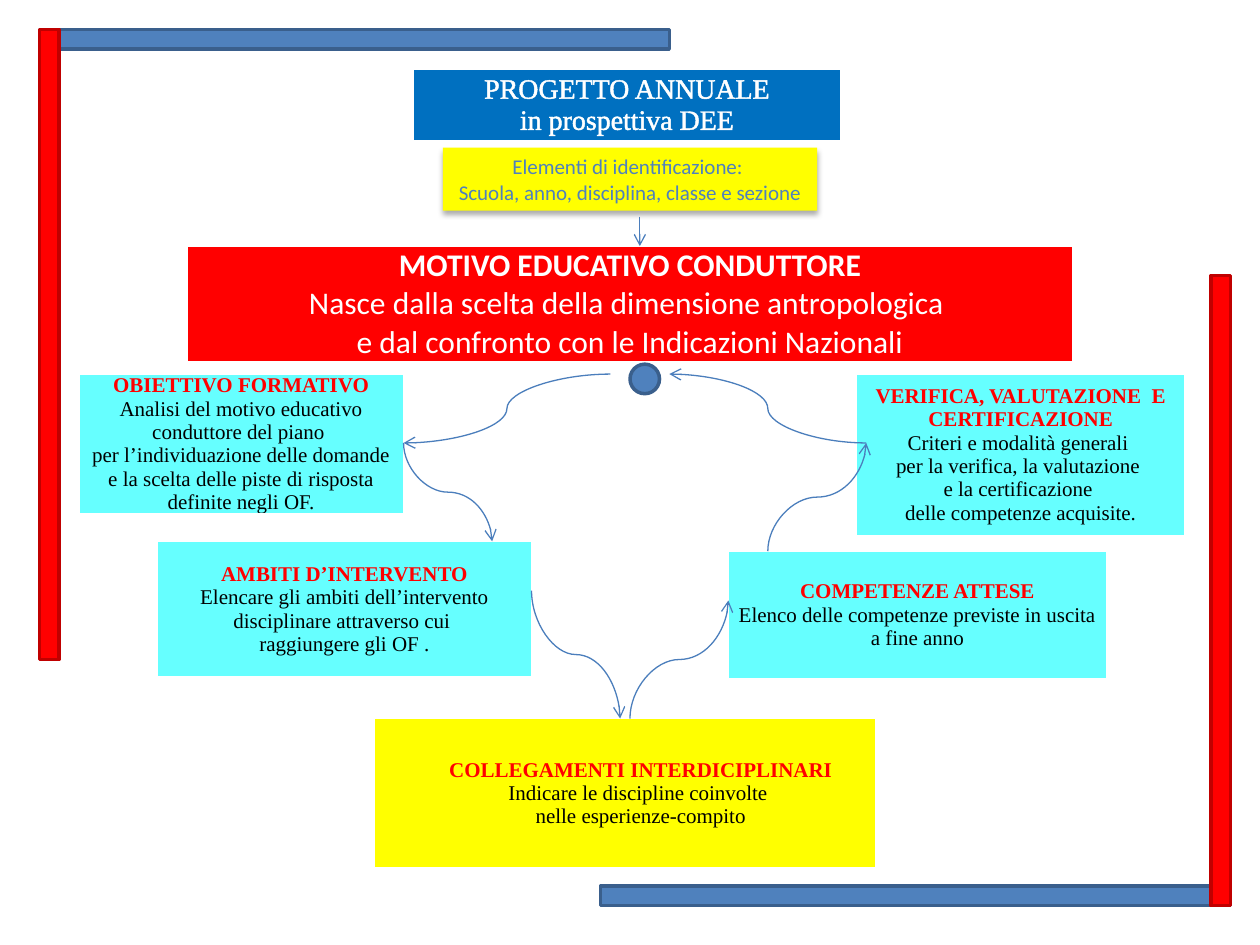
import copy

import lxml.etree
import pptx
import pptx.dml.color
import pptx.enum.shapes
import pptx.enum.text
import pptx.oxml
import pptx.oxml.ns
import pptx.util

SHAPE = pptx.enum.shapes.MSO_SHAPE
CONNECTOR = pptx.enum.shapes.MSO_CONNECTOR
COLORS = {"blue": "4F81BD", "blue_edge": "3A5F8C", "arrow": "4B7EBC",
          "red": "FF0000", "red_edge": "C00000", "title": "0070C0",
          "cyan": "66FFFF", "yellow": "FFFF00", "white": "FFFFFF",
          "black": "000000"}
SERIF, SANS = "Times New Roman", "Calibri"
HEADING = {"name": SERIF, "size": 12, "color": "red", "bold": True}
BODY = {"name": SERIF, "size": 12, "color": "black", "bold": False}
TITLE = {"name": SERIF, "size": 16, "color": "white", "bold": False}
THEME = {"name": SANS, "size": 18, "color": "white", "bold": True}
DETAIL = {**THEME, "bold": False}
LABEL = {"name": SANS, "size": 12, "color": "blue", "bold": False}

# The slide is a grid of 128 columns by 96 rows of square units.
UNIT = pptx.util.Inches(10) / 128


def grid(*values):
    return [round(v * UNIT) for v in values]


def rgb(name):
    return pptx.dml.color.RGBColor.from_string(COLORS[name])


def add_xml(parent, tag, content="", index=None):
    ns = pptx.oxml.ns.nsdecls("a")
    el = pptx.oxml.parse_xml(f"<a:{tag} {ns}>{content}</a:{tag}>")
    parent.insert(len(parent) if index is None else index, el)
    return el


def write(tf, paragraphs):
    """Fill a text frame with centred (text, format) paragraphs."""
    for i, (text, fmt) in enumerate(paragraphs):
        p = tf.paragraphs[0] if i == 0 else tf.add_paragraph()
        p.text = text
        p.alignment = pptx.enum.text.PP_ALIGN.CENTER
        for r in p.runs:
            values = {**fmt, "size": pptx.util.Pt(fmt["size"])}
            r.font.color.rgb = rgb(values.pop("color"))
            for key, value in values.items():
                setattr(r.font, key, value)
        for br in p._p.findall(pptx.oxml.ns.qn("a:br")):
            br.insert(0, copy.deepcopy(p.runs[0]._r.rPr))


def add_panel(s, box, fill, paragraphs, margin=0.05, indent=0):
    """One-cell table holding a coloured block of text."""
    table = s.shapes.add_table(1, 1, *grid(*box)).table
    table.first_row = table.horz_banding = False
    cell = table.cell(0, 0)
    cell.fill.solid()
    cell.fill.fore_color.rgb = rgb(fill)
    side = pptx.util.Inches(margin)
    settings = {"margin_left": side, "margin_right": side, "margin_top": 0,
                "margin_bottom": 0,
                "vertical_anchor": pptx.enum.text.MSO_ANCHOR.MIDDLE}
    for key, value in settings.items():
        setattr(cell, key, value)
    write(cell.text_frame, paragraphs)
    if indent:
        for p in cell.text_frame.paragraphs:
            p._p.get_or_add_pPr().set("marL", str(pptx.util.Inches(indent)))
    return cell


def add_block(s, box, fill, edge=None, kind=SHAPE.RECTANGLE):
    sp = s.shapes.add_shape(kind, *grid(*box))
    sp.shadow.inherit = False
    sp.fill.solid()
    sp.fill.fore_color.rgb = rgb(fill)
    if edge:
        sp.line.color.rgb = rgb(edge)
        sp.line.width = pptx.util.Pt(2)
    else:
        sp.line.fill.background()
    return sp


def add_title(s, box):
    cell = add_panel(s, box, "title", [("PROGETTO ANNUALE", TITLE),
                                       ("in prospettiva DEE", TITLE)], 0.07)
    for p in cell.text_frame.paragraphs:
        outline = add_xml(p.runs[0]._r.rPr, "ln", "<a:solidFill><a:srgbClr "
                          f'val="{COLORS["white"]}"/></a:solidFill>', 0)
        outline.set("w", str(pptx.util.Pt(1.45)))


def add_identification(s, box):
    sp = add_block(s, box, "yellow")
    write(sp.text_frame, [
        ("Elementi di identificazione: ", LABEL),
        ("Scuola, anno, disciplina, classe e sezione", LABEL)])
    sp.text_frame.word_wrap = True
    effects = sp._element.spPr.find(pptx.oxml.ns.qn("a:effectLst"))
    shadow = add_xml(effects, "outerShdw", f'<a:srgbClr val="{COLORS["black"]}">'
                     '<a:alpha val="32000"/></a:srgbClr>')
    for key, value in {"blurRad": pptx.util.Pt(3.5), "dist": pptx.util.Pt(2.2),
                       "dir": 90 * 60000, "rotWithShape": 0}.items():
        shadow.set(key, str(int(value)))


def add_arrow(s, start, end, kind=CONNECTOR.CURVE, upright=False):
    """Arrow from start to end; an upright curve leaves and arrives vertically."""
    (x1, y1), (x2, y2) = start, end
    if upright:
        # A curve runs sideways by nature, so its box is swapped and turned.
        cx, cy, dx, dy = (x1 + x2) / 2, (y1 + y2) / 2, x2 - x1, y2 - y1
        half_w = abs(dy) / 2
        half_h = dx / 2 if dy > 0 else -dx / 2
        x1, x2, y1, y2 = cx + half_w, cx - half_w, cy - half_h, cy + half_h
    line = s.shapes.add_connector(kind, *grid(x1, y1, x2, y2))
    line.line.color.rgb = rgb("arrow")
    line.line.width = pptx.util.Pt(0.75)
    spPr = line._element.spPr
    if upright:
        spPr.xfrm.set("rot", str((270 if dy > 0 else 90) * 60000))
    add_xml(line.line._get_or_add_ln(), "tailEnd").set("type", "arrow")
    add_xml(spPr, "effectLst")


def add_frame(s, left, top, right, bottom):
    """Two L-shaped corners of bars, top left and bottom right."""
    length, thick = 64, 2
    for x, y in ((left, top), (right - length, bottom - thick)):
        add_block(s, (x, y, length, thick), "blue", "blue_edge")
    for x, y in ((left, top), (right - thick, bottom - length)):
        add_block(s, (x, y, thick, length), "red", "red_edge")


def add_cycle(s):
    steps = [
        ((8, 38, 33, 14.2), "cyan", "OBIETTIVO FORMATIVO",
         "Analisi del motivo educativo conduttore del piano \n"
         "per l’individuazione delle domande e la scelta delle piste di "
         "risposta definite negli OF."),
        ((16, 55, 38, 13.8), "cyan", "AMBITI D’INTERVENTO",
         "Elencare gli ambiti dell’intervento disciplinare attraverso cui \n"
         "raggiungere gli OF ."),
        ((38, 73, 51, 15.2), "yellow", "COLLEGAMENTI INTERDICIPLINARI",
         "Indicare le discipline coinvolte \nnelle esperienze-compito"),
        ((74, 56, 38.4, 13), "cyan", "COMPETENZE ATTESE",
         "Elenco delle competenze previste in uscita a fine anno"),
        ((87, 38, 33.4, 16.4), "cyan", "VERIFICA, VALUTAZIONE  E CERTIFICAZIONE",
         "Criteri e modalità generali \nper la verifica, la valutazione \n"
         "e la certificazione \ndelle competenze acquisite."),
    ]
    for box, fill, heading, body in steps:
        wide = fill == "yellow"
        add_panel(s, box, fill, [(heading, HEADING), (body, BODY)],
                  margin=0.1 if wide else 0.05, indent=0.25 if wide else 0)
    for start, end, upright in (((62, 38), (41, 45), False),
                                ((41, 45), (50, 55), True),
                                ((54, 60), (63, 73), True),
                                ((64, 73), (74, 61), True),
                                ((78, 56), (88, 45), True),
                                ((88, 45), (68, 38), False)):
        add_arrow(s, start, end, upright=upright)


def main():
    prs = pptx.Presentation()
    prs.slide_width, prs.slide_height = grid(128, 96)
    s = prs.slides.add_slide(prs.slide_layouts[6])
    add_title(s, (42, 7, 43.4, 7.3))
    add_identification(s, (45, 15, 38, 6.4))
    add_panel(s, (19, 25, 90, 11.6), "red", [
        ("MOTIVO EDUCATIVO CONDUTTORE", THEME),
        ("Nasce dalla scelta della dimensione antropologica ", DETAIL),
        ("e dal confronto con le Indicazioni Nazionali", DETAIL)])
    add_arrow(s, (65, 22), (65, 25), CONNECTOR.STRAIGHT)
    add_cycle(s)
    add_frame(s, 4, 3, 125, 92)
    add_block(s, (64, 37, 3, 3), "blue", "blue_edge", SHAPE.OVAL)
    prs.save("out.pptx")


if __name__ == "__main__":
    main()
